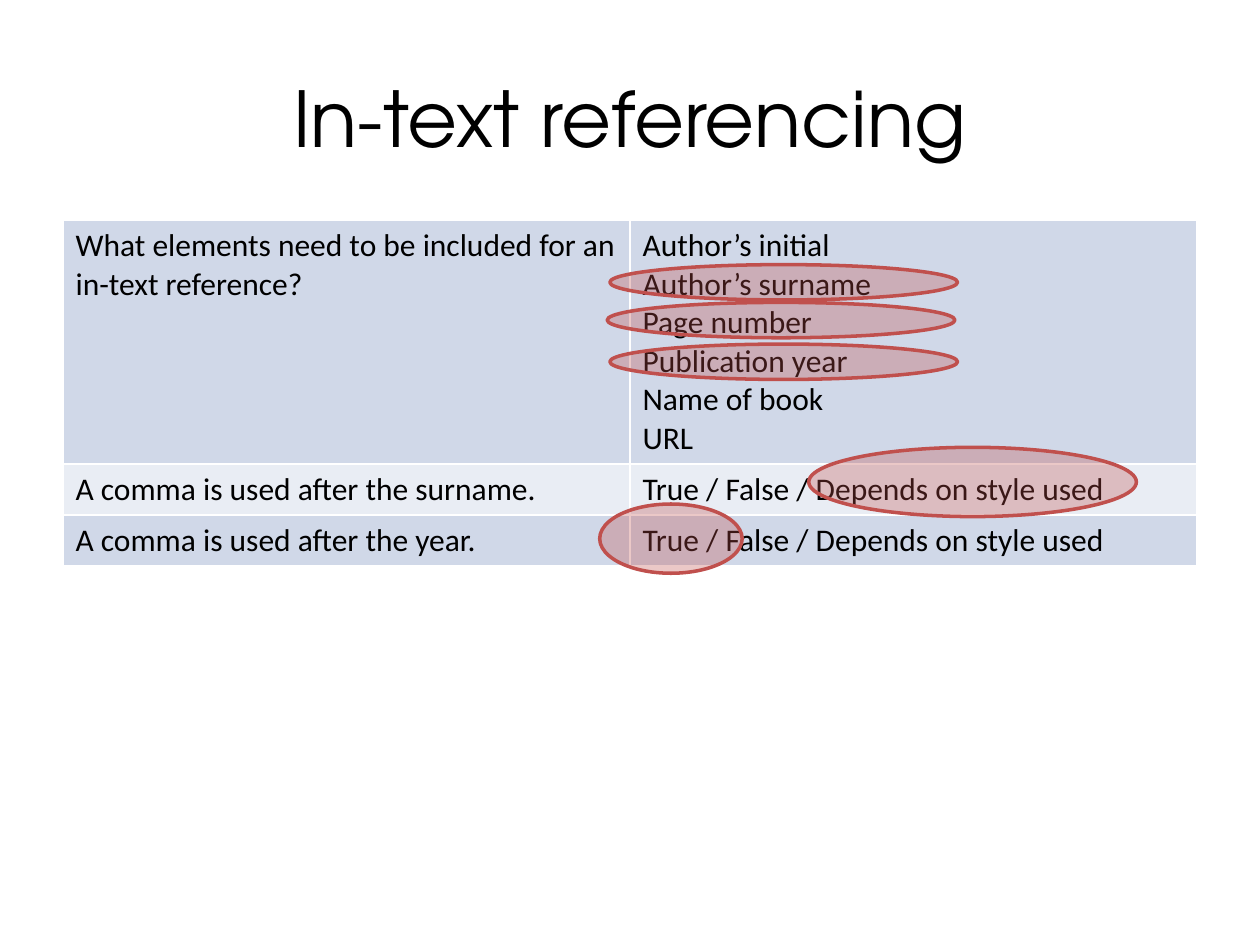
from dataclasses import dataclass
from lxml import etree
from pptx import Presentation
from pptx.dml.color import RGBColor
from pptx.enum.shapes import MSO_SHAPE
from pptx.enum.text import MSO_ANCHOR, PP_ALIGN
from pptx.oxml.ns import qn
from pptx.util import Pt

OVAL = MSO_SHAPE.OVAL
MIDDLE = MSO_ANCHOR.MIDDLE
CENTER = PP_ALIGN.CENTER
TITLE_ONLY = 5


@dataclass(frozen=True)
class Theme:
    ink: str = "000000"
    rule: str = "FFFFFF"
    bands: tuple = ("D0D8E8", "E9EDF4")
    mark: str = "C0504D"
    alpha: int = 31
    head_font: str = "TeX Gyre Adventor"
    body_font: str = "Calibri"
    head_size: int = 44
    body_size: int = 18


THEME = Theme()

CHOICE = "True / False / Depends on style used"
ROWS = [
    ("What elements need to be included for an in-text reference?",
     "Author’s initial\nAuthor’s surname\nPage number\n"
     "Publication year\nName of book\nURL"),
    ("A comma is used after the surname.", CHOICE),
    ("A comma is used after the year.", CHOICE),
]
HEIGHTS = (137, 29, 29)

# Answer rings: left, top, width, height from the table's corner
RINGS = [
    (312.5, 25.2, 198.7, 20.2),
    (311, 46.8, 198.7, 20.2),
    (312.5, 70.6, 198.7, 20.2),
    (426.2, 129.6, 187.2, 39.6),
    (306.7, 162, 81.4, 39.6),
]


def style(frame, font, size):
    for para in frame.paragraphs:
        for run in para.runs:
            run.font.name = font
            run.font.size = Pt(size)
            run.font.color.rgb = RGBColor.from_string(THEME.ink)


def add_title(slide, box, text):
    title = slide.shapes.title
    title.left, title.top, title.width, title.height = map(Pt, box)
    frame = title.text_frame
    frame.text = text
    frame.vertical_anchor = MIDDLE
    frame.paragraphs[0].alignment = CENTER
    style(frame, THEME.head_font, THEME.head_size)


def add_rules(cell):
    props = cell._tc.get_or_add_tcPr()
    for side in ("lnL", "lnR", "lnT", "lnB"):
        line = etree.SubElement(props, qn(f"a:{side}"), w=str(Pt(1)))
        fill = etree.SubElement(line, qn("a:solidFill"))
        etree.SubElement(fill, qn("a:srgbClr"), val=THEME.rule)


def add_quiz(slide, box):
    count = len(ROWS[0])
    table = slide.shapes.add_table(len(ROWS), count, *map(Pt, box)).table
    table.first_row = table.horz_banding = False
    for col in table.columns:
        col.width = Pt(box[2] / count)
    for r, texts in enumerate(ROWS):
        table.rows[r].height = Pt(HEIGHTS[r])
        for c, text in enumerate(texts):
            cell = table.cell(r, c)
            cell.text_frame.text = text
            style(cell.text_frame, THEME.body_font, THEME.body_size)
            add_rules(cell)
            cell.fill.solid()
            band = THEME.bands[r % len(THEME.bands)]
            cell.fill.fore_color.rgb = RGBColor.from_string(band)


def add_rings(slide, box):
    color = RGBColor.from_string(THEME.mark)
    for x, y, wide, high in RINGS:
        ring = slide.shapes.add_shape(
            OVAL, Pt(box[0] + x), Pt(box[1] + y), Pt(wide), Pt(high))
        ring.shadow.inherit = False
        ring.fill.solid()
        ring.fill.fore_color.rgb = color
        tint = ring.fill._xPr.find(f".//{qn('a:srgbClr')}")
        etree.SubElement(tint, qn("a:alpha"), val=str(THEME.alpha * 1000))
        ring.line.color.rgb = color
        ring.line.width = Pt(2)


def main():
    deck = Presentation()
    deck.slide_width, deck.slide_height = Pt(720), Pt(540)
    slide = deck.slides.add_slide(deck.slide_layouts[TITLE_ONLY])
    add_title(slide, (36, 21.6, 648, 90), "In-text referencing")
    quiz = (36, 126, 648, sum(HEIGHTS))
    add_quiz(slide, quiz)
    add_rings(slide, quiz)
    deck.save("out.pptx")


if __name__ == "__main__":
    main()
